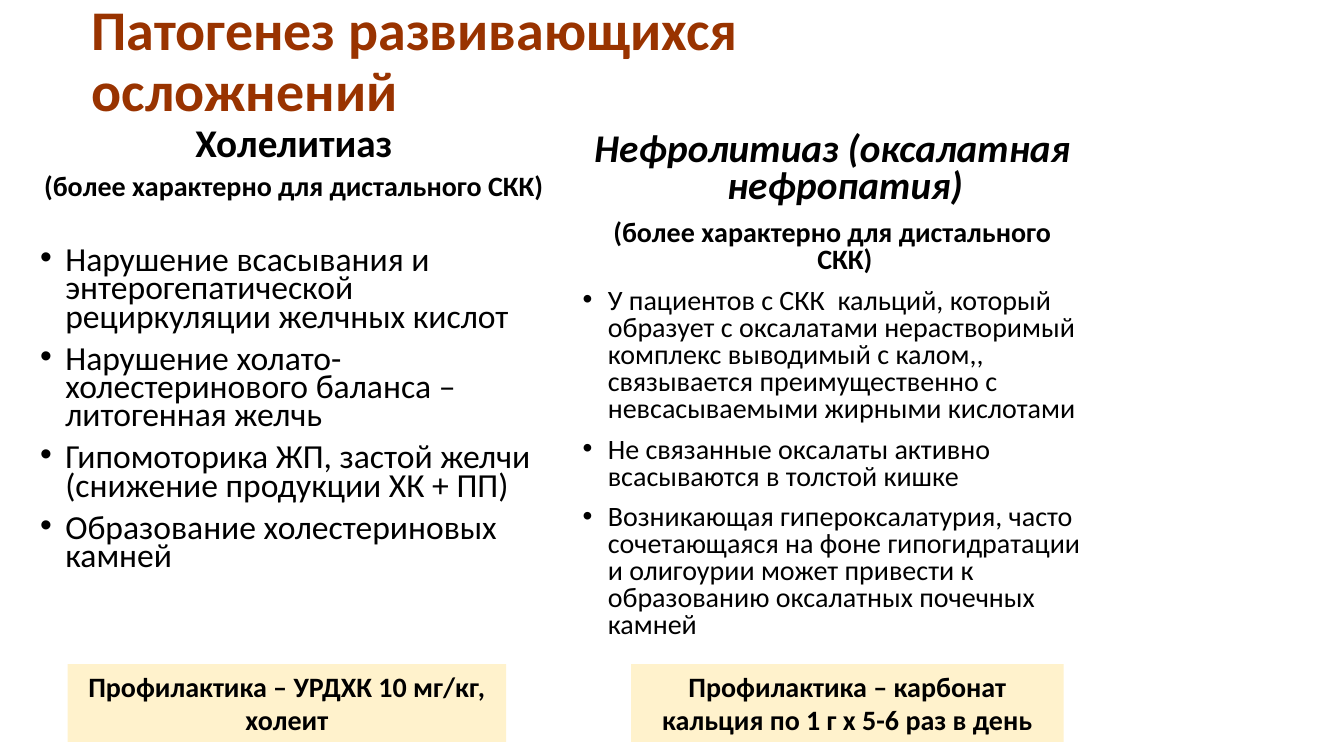
from lxml.etree import SubElement
from pptx import Presentation
from pptx.dml.color import RGBColor
from pptx.enum.shapes import MSO_SHAPE
from pptx.enum.text import MSO_ANCHOR, MSO_AUTO_SIZE, PP_ALIGN
from pptx.oxml.ns import qn
from pptx.util import Inches, Pt

COLORS = {"title": "993300", "text": "000000", "box": "FFF2CC"}
FONT = "Calibri"


def write(para, text, size=20, color="text", bold=False, italic=False,
          center=False, line=None, before=0, hang=0, bullet=False):
    """Fill one paragraph with text in the given format."""
    run = para.add_run()
    run.text = text
    font = run.font
    font.name, font.size, font.bold, font.italic = FONT, Pt(size), bold, italic
    font.color.rgb = RGBColor.from_string(COLORS[color])
    para.alignment = PP_ALIGN.CENTER if center else PP_ALIGN.LEFT
    para.space_before = Pt(before)
    if line:
        para.line_spacing = line
    props = para._p.get_or_add_pPr()
    if hang:
        props.set("marL", str(Inches(hang)))
        props.set("indent", str(-Inches(hang)))
    if bullet:
        SubElement(props, qn("a:buFont")).set("typeface", "Arial")
        SubElement(props, qn("a:buChar")).set("char", "•")


class Page:
    def __init__(self, deck):
        self.slide = deck.slides.add_slide(deck.slide_layouts[5])
        self.shapes = self.slide.shapes

    def fill(self, frame, items, **style):
        """Write (text, format) pairs as the paragraphs of a frame."""
        frame.word_wrap = True
        frame.auto_size = MSO_AUTO_SIZE.NONE
        for i, (text, extra) in enumerate(items):
            para = frame.add_paragraph() if i else frame.paragraphs[0]
            write(para, text, **{**style, **extra})

    def title(self, text, x, y, w, h):
        head = self.shapes.title
        head.left, head.top, head.width, head.height = map(Inches, (x, y, w, h))
        head.text_frame.vertical_anchor = MSO_ANCHOR.MIDDLE
        self.fill(head.text_frame, [(text, {})], size=40, color="title",
                  bold=True, line=0.9)

    def column(self, items, x, y, w, h, line):
        box = self.shapes.add_textbox(*map(Inches, (x, y, w, h)))
        self.fill(box.text_frame, items, line=line, before=10, hang=0.25)

    def box(self, lines, x, y, w, h):
        rect = self.shapes.add_shape(MSO_SHAPE.RECTANGLE,
                                     *map(Inches, (x, y, w, h)))
        rect.shadow.inherit = False
        rect.fill.solid()
        rect.fill.fore_color.rgb = RGBColor.from_string(COLORS["box"])
        rect.line.fill.background()
        rect.text_frame.vertical_anchor = MSO_ANCHOR.TOP
        self.fill(rect.text_frame, [(text, {}) for text in lines],
                  bold=True, center=True)


def main():
    deck = Presentation()
    deck.slide_width, deck.slide_height = Inches(13.33), Inches(7.5)
    page = Page(deck)
    page.title("Патогенез развивающихся осложнений", 0.81, 0, 9.51, 1.25)

    head = {"size": 28, "bold": True, "center": True}
    note = {"bold": True, "center": True}
    large = {"size": 24, "bullet": True}
    small = {"bullet": True}

    # Left column: gallstones
    page.column([
        ("Холелитиаз", head),
        ("(более характерно для дистального СКК)", note),
        ("Нарушение всасывания и энтерогепатической рециркуляции "
         "желчных кислот", {**large, "before": 34}),
        ("Нарушение холато-холестеринового баланса – литогенная желчь", large),
        ("Гипомоторика ЖП, застой желчи (снижение продукции ХК + ПП)", large),
        ("Образование холестериновых камней", large),
    ], 0.3, 1.25, 5.23, 4.95, line=0.7)

    # Right column: kidney stones
    page.column([
        ("Нефролитиаз (оксалатная нефропатия)", {**head, "italic": True}),
        ("(более характерно для дистального СКК)", note),
        ("У пациентов с СКК  кальций, который образует с оксалатами "
         "нерастворимый комплекс выводимый с калом,,  связывается "
         "преимущественно с невсасываемыми жирными кислотами", small),
        ("Не связанные оксалаты активно всасываются в толстой кишке", small),
        ("Возникающая гипероксалатурия, часто сочетающаяся на фоне "
         "гипогидратации и олигоурии может привести к образованию "
         "оксалатных почечных камней", small),
    ], 5.68, 1.26, 5.15, 5.04, line=0.8)

    # Prevention boxes
    page.box(["Профилактика – УРДХК 10 мг/кг,", "холеит"],
             0.67, 6.59, 4.35, 0.77)
    page.box(["Профилактика – карбонат кальция по 1 г х 5-6 раз в день"],
             6.26, 6.59, 4.29, 0.77)
    deck.save("out.pptx")


if __name__ == "__main__":
    main()
